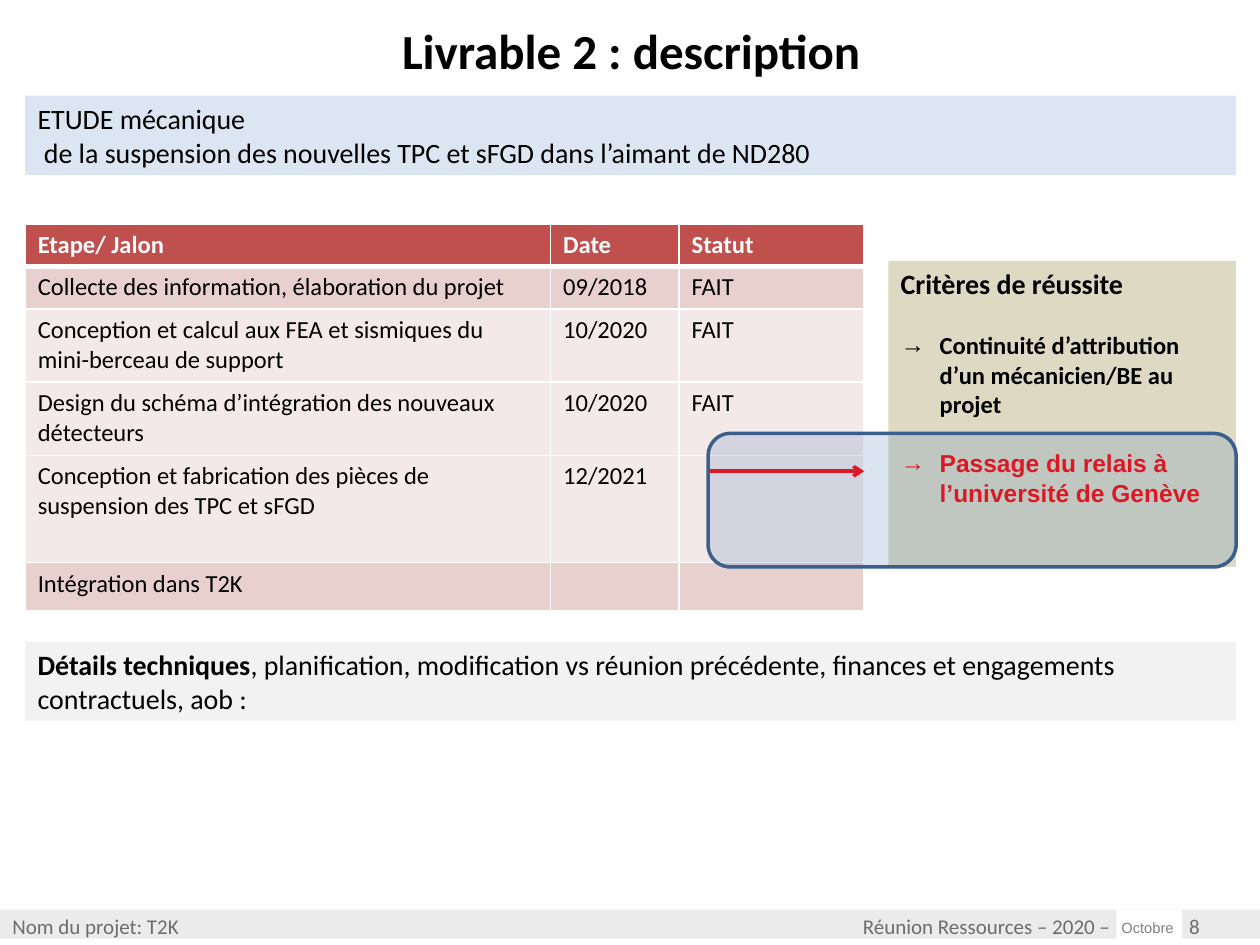
import pptx
import pptx.util
import pptx.dml.color
import pptx.enum.shapes
import pptx.enum.text
import pptx.oxml
import pptx.oxml.ns
from pptx.util import Inches

SHAPES = pptx.enum.shapes.MSO_SHAPE
ANCHOR = pptx.enum.text.MSO_ANCHOR
ALIGN = pptx.enum.text.PP_ALIGN
LEFT, WIDTH = 0.2, 9.61

STEPS = [
    ("Etape/ Jalon", "Date", "Statut"),
    ("Collecte des information, élaboration du projet", "09/2018", "FAIT"),
    ("Conception et calcul aux FEA et sismiques du mini-berceau de support", "10/2020", "FAIT"),
    ("Design du schéma d’intégration des nouveaux détecteurs", "10/2020", "FAIT"),
    ("Conception et fabrication des pièces de suspension des TPC et sFGD", "12/2021", ""),
    ("Intégration dans T2K", "", ""),
]
COLUMN_WIDTHS = [4.17, 1.02, 1.47]
ROW_HEIGHTS = [0.33, 0.34, 0.58, 0.58, 0.85, 0.38]
ROW_FILLS = ["C0504D", "E8D0CF", "F4E9E9", "F4E9E9", "F4E9E9", "E8D0CF"]


def rgb(color):
    return pptx.dml.color.RGBColor.from_string(color)


def xml(tag, attributes, content=""):
    namespace = pptx.oxml.ns.nsdecls("a")
    return pptx.oxml.parse_xml(f"<a:{tag} {namespace} {attributes}>{content}</a:{tag}>")


def style(item, size, color="000000", bold=False, name="Calibri"):
    item.font.size = pptx.util.Pt(size)
    item.font.color.rgb = rgb(color)
    item.font.bold = bold
    item.font.name = name


def style_all(frame, *args, **kwargs):
    for paragraph in frame.paragraphs:
        for run in paragraph.runs:
            style(run, *args, **kwargs)


def add_text(slide, box, text, size, bold=False, wrap=False):
    frame = slide.shapes.add_textbox(*map(Inches, box)).text_frame
    frame.word_wrap = wrap
    frame.text = text
    style_all(frame, size, bold=bold)
    return frame


def add_panel(slide, box, fill, alpha=None, kind=SHAPES.RECTANGLE, line=None):
    panel = slide.shapes.add_shape(kind, *map(Inches, box))
    panel.shadow.inherit = False
    panel.fill.solid()
    panel.fill.fore_color.rgb = rgb(fill)
    if alpha:
        color = panel.fill._xPr.find(".//" + pptx.oxml.ns.qn("a:srgbClr"))
        color.append(xml("alpha", f'val="{alpha * 1000}"'))
    if line:
        panel.line.color.rgb = rgb(line)
        panel.line.width = pptx.util.Pt(2)
    else:
        panel.line.fill.background()
    return panel


def set_panel_text(panel, text, size, anchor=ANCHOR.TOP, **font):
    frame = panel.text_frame
    frame.word_wrap = True
    frame.vertical_anchor = anchor
    frame.text = text
    for paragraph in frame.paragraphs:
        paragraph.alignment = ALIGN.LEFT
    style_all(frame, size, **font)
    return frame


def add_arrow_item(frame, text, **font):
    paragraph = frame.add_paragraph()
    paragraph.text = text
    paragraph.alignment = ALIGN.LEFT
    paragraph.space_before = pptx.util.Pt(17)
    properties = paragraph._p.get_or_add_pPr()
    properties.set("marL", str(Inches(0.31)))
    properties.set("indent", str(-Inches(0.31)))
    properties.append(xml("buFont", 'typeface="Arial"'))
    properties.append(xml("buChar", 'char="→"'))
    style(paragraph.runs[0], 14, bold=True, **font)


def add_arrow(slide, start, end, color):
    arrow = slide.shapes.add_connector(
        pptx.enum.shapes.MSO_CONNECTOR.STRAIGHT, *map(Inches, start + end))
    arrow.line.color.rgb = rgb(color)
    arrow.line.width = pptx.util.Pt(2)
    arrow.line._get_or_add_ln().append(xml("tailEnd", 'type="arrow"'))
    arrow._element.spPr.append(xml("effectLst", ""))


def add_borders(cell, row):
    properties = cell._tc.get_or_add_tcPr()
    thick = {0: "lnB", 1: "lnT"}.get(row)
    white = '<a:solidFill><a:srgbClr val="FFFFFF"/></a:solidFill>'
    for index, side in enumerate(("lnL", "lnR", "lnT", "lnB")):
        width = pptx.util.Pt(3 if side == thick else 0.96)
        properties.insert(index, xml(side, f'w="{width}"', white))


def add_steps_table(slide):
    table = slide.shapes.add_table(
        len(STEPS), len(COLUMN_WIDTHS), Inches(LEFT), Inches(1.78),
        Inches(sum(COLUMN_WIDTHS)), Inches(sum(ROW_HEIGHTS))).table
    for column, width in zip(table.columns, COLUMN_WIDTHS):
        column.width = Inches(width)
    for r, step in enumerate(STEPS):
        table.rows[r].height = Inches(ROW_HEIGHTS[r])
        for c, text in enumerate(step):
            cell = table.cell(r, c)
            cell.fill.solid()
            cell.fill.fore_color.rgb = rgb(ROW_FILLS[r])
            add_borders(cell, r)
            cell.text = text
            style(cell.text_frame.paragraphs[0], 14)
            style_all(cell.text_frame, 14, "000000" if r else "FFFFFF", r == 0)


def main():
    deck = pptx.Presentation()
    deck.slide_width, deck.slide_height = Inches(10), Inches(7.5)
    slide = deck.slides.add_slide(deck.slide_layouts[6])

    # Footer, dimmed by a translucent band
    add_text(slide, (6.75, 7.2, 2.95, 0.3), "Réunion Ressources – 2020 –", 12)
    add_text(slide, (9.34, 7.2, 0.9, 0.3), "8", 12)
    add_text(slide, (0, 7.2, 2, 0.3), "Nom du projet: T2K", 12)
    add_panel(slide, (0, 7.22, 10, 0.23), "D9D9D9", alpha=50)

    # Subject and technical details
    subject = add_panel(slide, (LEFT, 0.76, WIDTH, 0.63), "DCE6F2")
    set_panel_text(subject, "ETUDE mécanique\n de la suspension des nouvelles TPC et sFGD "
                   "dans l’aimant de ND280", 16)
    details = add_panel(slide, (LEFT, 5.09, WIDTH, 0.63), "F2F2F2")
    details_frame = set_panel_text(details, "Détails techniques", 16, bold=True)
    remainder = details_frame.paragraphs[0].add_run()
    remainder.text = (", planification, modification vs réunion précédente, "
                      "finances et engagements contractuels, aob :")
    style(remainder, 16)

    # Success criteria
    criteria = add_panel(slide, (7.05, 2.07, 2.76, 2.43), "DDD9C3")
    criteria_frame = set_panel_text(criteria, "Critères de réussite", 16, bold=True)
    add_arrow_item(criteria_frame, "Continuité d’attribution d’un mécanicien/BE au projet")
    add_arrow_item(criteria_frame, "Passage du relais à l’université de Genève",
                   color="FF0000", name="Arial")

    # Title
    title = add_text(slide, (0.51, 0.05, 9, 0.69), "Livrable 2 : description", 28,
                     bold=True, wrap=True)
    title.vertical_anchor = ANCHOR.MIDDLE
    title.paragraphs[0].alignment = ALIGN.CENTER

    add_steps_table(slide)

    # Month label over the footer
    month = add_panel(slide, (8.86, 7.22, 0.52, 0.28), "FFFFFF")
    month_frame = set_panel_text(month, "Octobre", 8.4, ANCHOR.MIDDLE,
                                 color="808080", name="Arial")
    month_frame.margin_left = month_frame.margin_right = Inches(0.04)
    month_frame.margin_top = month_frame.margin_bottom = Inches(0.04)

    # Link between the open step and its criterion
    add_arrow(slide, (5.62, 3.74), (6.86, 3.74), "FF0000")
    add_panel(slide, (5.62, 3.44, 4.19, 1.06), "4F81BD", alpha=20,
              kind=SHAPES.ROUNDED_RECTANGLE, line="3A5F8C")

    deck.save("out.pptx")


if __name__ == "__main__":
    main()
